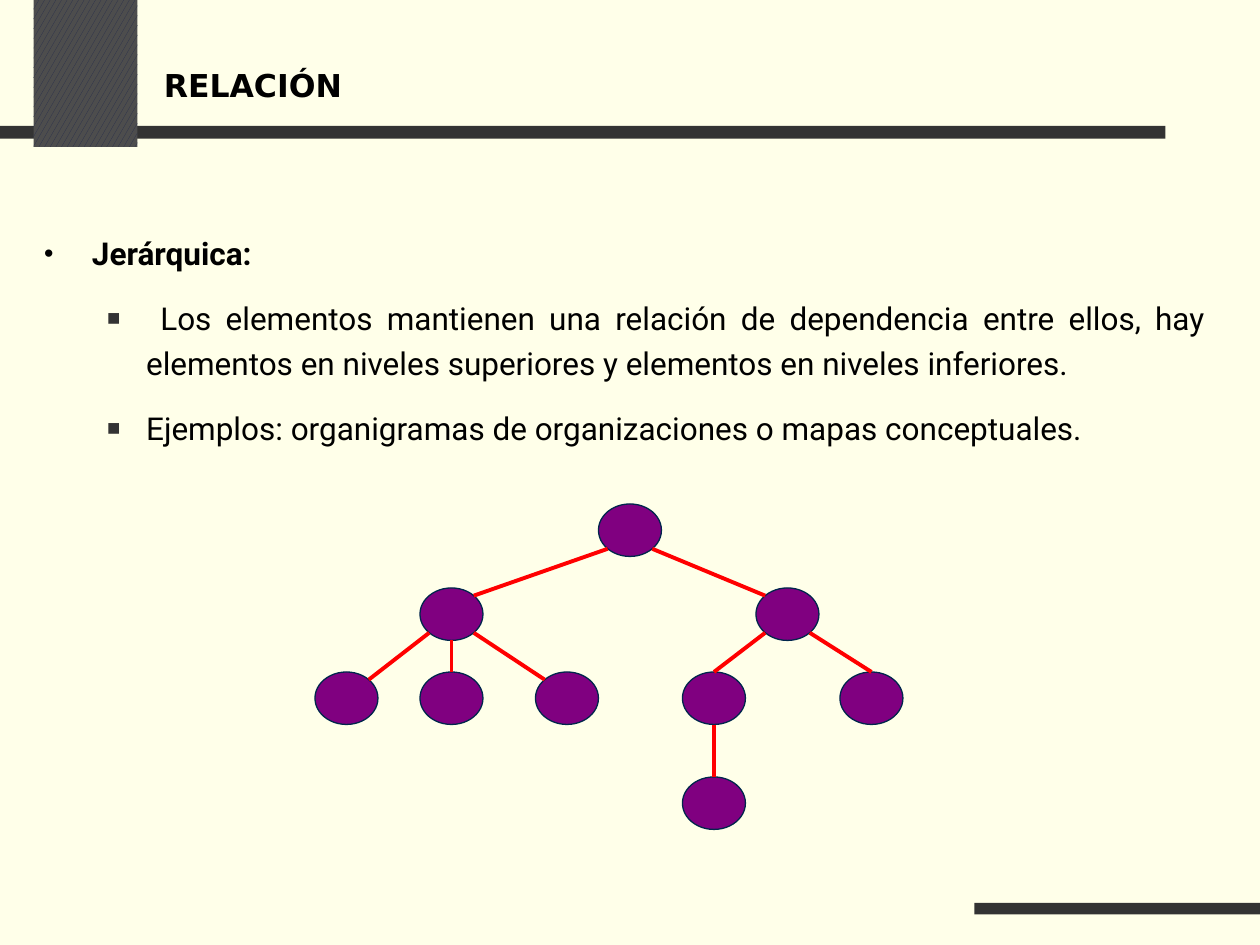
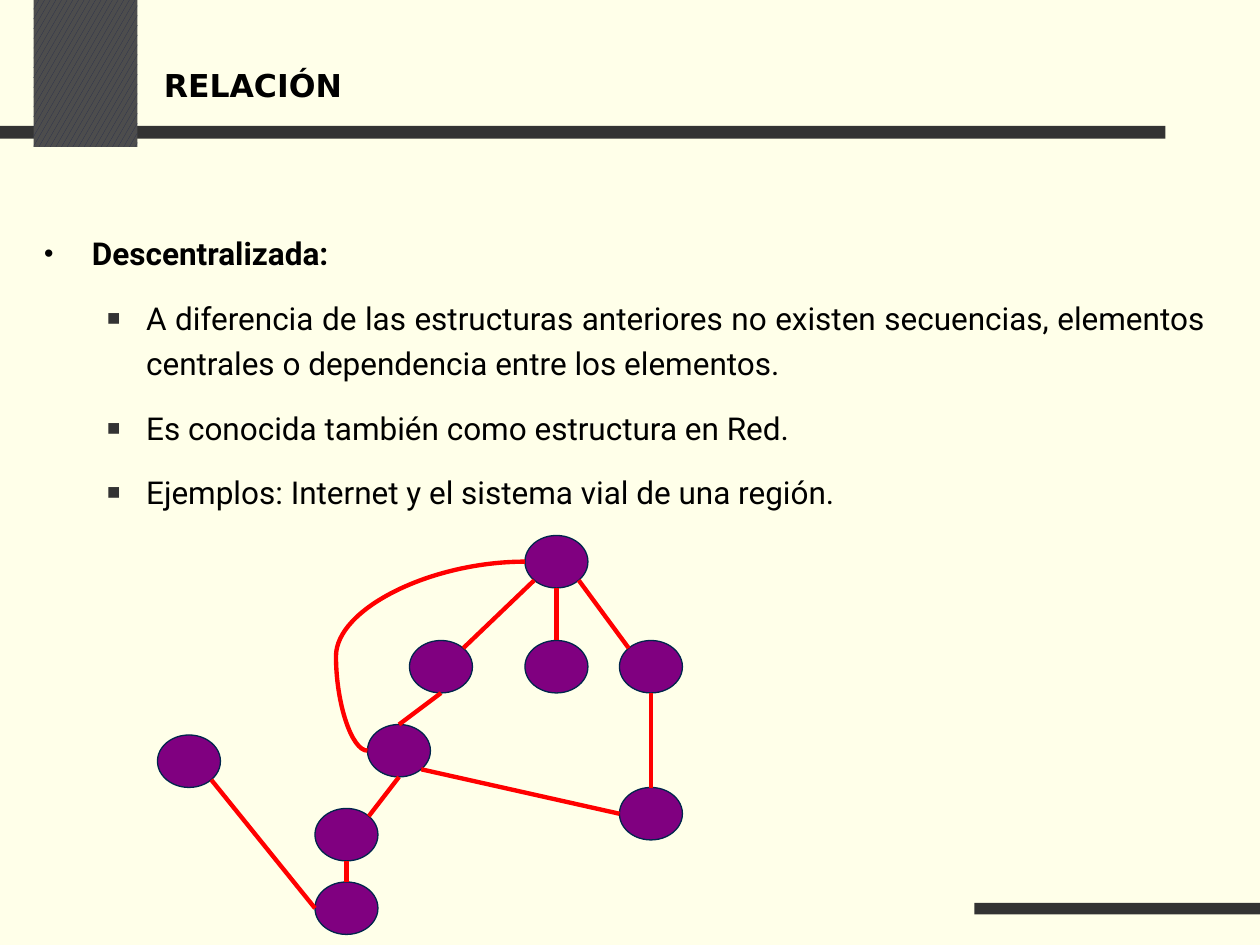
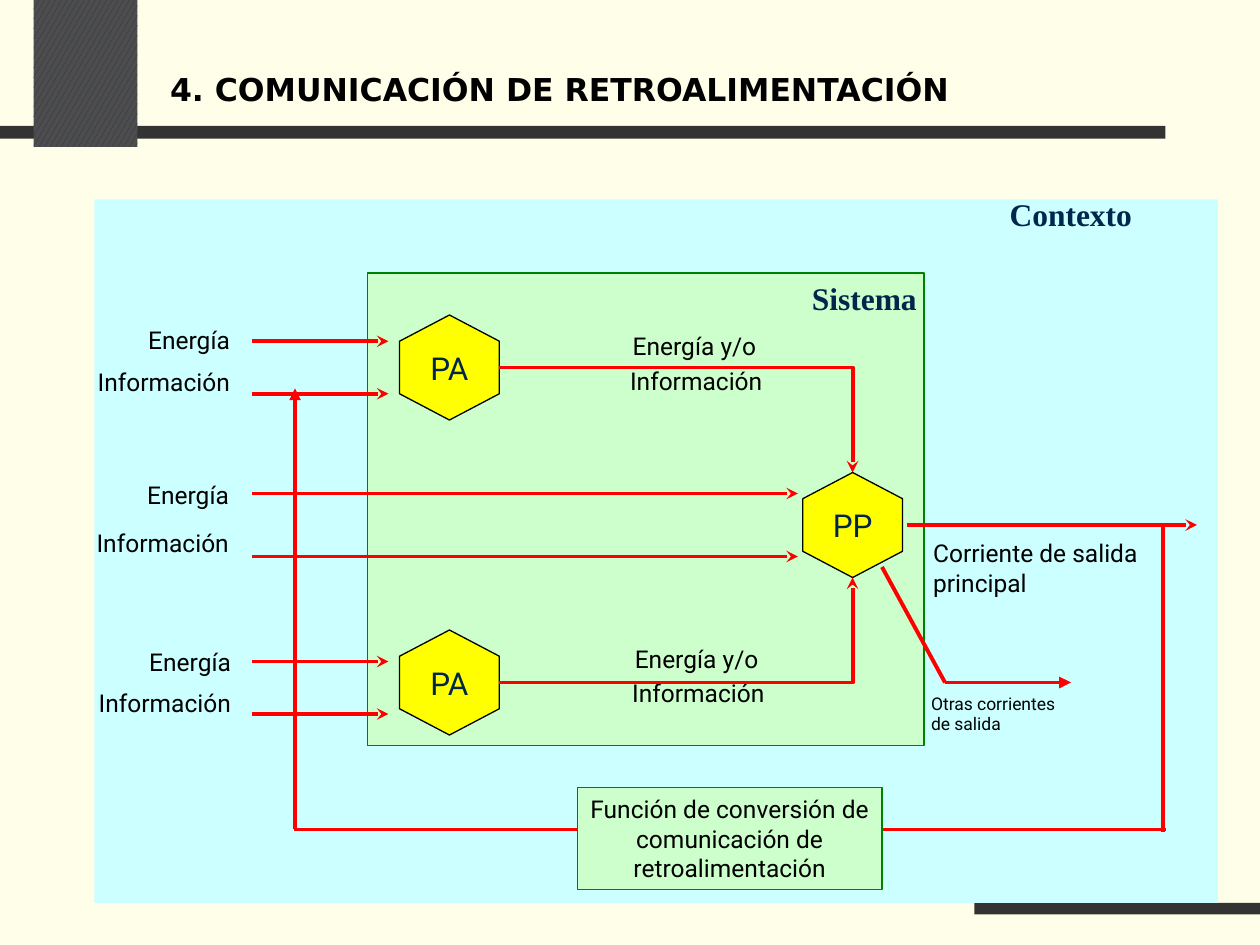
import math
from dataclasses import dataclass

import pptx
import pptx.dml.color
import pptx.enum.dml
import pptx.enum.shapes
import pptx.enum.text
import pptx.oxml
import pptx.oxml.ns
import pptx.util
from lxml import etree

SHAPE = pptx.enum.shapes.MSO_SHAPE
CONNECTOR = pptx.enum.shapes.MSO_CONNECTOR
ALIGN = pptx.enum.text.PP_ALIGN
ANCHOR = pptx.enum.text.MSO_ANCHOR
RGB = pptx.dml.color.RGBColor.from_string
qn = pptx.oxml.ns.qn


@dataclass(frozen=True)
class TextStyle:
    font: str
    size: int
    color: str = "000000"
    bold: bool = False


class Theme:
    cell = pptx.util.Inches(10) / 120  # the slide is a grid of 120 x 90 cells
    page = "FFFFE9"
    band = "333333"
    block_fore, block_back = "262D4C", "4D4D4D"
    node, node_edge = "800080", "00264C"
    flow = "FF0000"
    context, system, system_edge = "CCFFFF", "CCFFCC", "008000"
    process, process_edge = "FFFF00", "000000"
    title = TextStyle("DejaVu Sans", 18, bold=True)
    body = TextStyle("Roboto", 18)
    label = TextStyle("Roboto", 14)
    small = TextStyle("Roboto", 10)
    process_text = TextStyle("Roboto", 18, "00264C")
    area = TextStyle("Times New Roman", 18, "00264C", True)


def place(shapes, kind, box, fill=None, edge=None):
    """Add a preset shape, or a text box if kind is None; box is in grid cells."""
    left, top, width, height = (round(n * Theme.cell) for n in box)
    if kind is None:
        return shapes.add_textbox(left, top, width, height)
    part = shapes.add_shape(kind, left, top, width, height)
    part.shadow.inherit = False
    part.fill.solid()
    part.fill.fore_color.rgb = RGB(fill)
    if edge:
        part.line.color.rgb = RGB(edge)
        part.line.width = pptx.util.Pt(0.75)
    else:
        part.line.fill.background()
    return part


def write(frame, lines, style, align=ALIGN.LEFT, spacing=1.0, gap=0, wrap=True):
    """Fill a text frame; gap is the space in points between paragraphs."""
    frame.text = "\n".join(lines)
    frame.word_wrap = wrap
    frame.auto_size = pptx.enum.text.MSO_AUTO_SIZE.NONE
    for number, paragraph in enumerate(frame.paragraphs):
        paragraph.alignment = align
        paragraph.line_spacing = spacing
        paragraph.space_before = pptx.util.Pt(gap if number else 0)
        for run in paragraph.runs:
            run.font.name = style.font
            run.font.size = pptx.util.Pt(style.size)
            run.font.bold = style.bold
            run.font.color.rgb = RGB(style.color)


prs = pptx.Presentation()
prs.slide_width = pptx.util.Inches(10)
prs.slide_height = pptx.util.Inches(7.5)
content_layout, title_layout = prs.slide_layouts[1], prs.slide_layouts[5]

# Slides and titles
HEADINGS = [
    (content_layout, "RELACIÓN", (14.4, 3.5, 102, 7), ANCHOR.BOTTOM),
    (content_layout, "RELACIÓN", (14.4, 3.5, 102, 7), ANCHOR.BOTTOM),
    (title_layout, "4. COMUNICACIÓN DE RETROALIMENTACIÓN", (15, 1, 102, 15), ANCHOR.MIDDLE),
]
slides = []
for layout, heading, box, anchor in HEADINGS:
    slide = prs.slides.add_slide(layout)
    title = slide.shapes.title
    title.left, title.top, title.width, title.height = (round(n * Theme.cell) for n in box)
    write(title.text_frame, [heading], Theme.title)
    title.text_frame.vertical_anchor = anchor
    slides.append(slide)
hierarchy, network, feedback = slides

# Background and bands, moved to the master so that every slide shares them
master = prs.slide_master
master.background.fill.solid()
master.background.fill.fore_color.rgb = RGB(Theme.page)
header_rule, corner_block, footer_rule = bands = [
    place(hierarchy.shapes, SHAPE.RECTANGLE, box, Theme.band)
    for box in [(0, 12, 111, 1.2), (3.2, 0, 9.9, 14), (92.8, 86, 27.2, 1.1)]
]
corner_block.fill.patterned()
corner_block.fill.pattern = pptx.enum.dml.MSO_PATTERN.LARGE_CONFETTI
corner_block.fill.fore_color.rgb = RGB(Theme.block_fore)
corner_block.fill.back_color.rgb = RGB(Theme.block_back)
for number, band in enumerate(bands, start=20):
    band.element.nvSpPr.cNvPr.id = number
    master.shapes.element.append(band.element)

# Explanations and node diagrams; node places are in cells
NODE_WIDTH, NODE_HEIGHT = 6, 5
DIAGONAL = math.sqrt(0.5)
SITES = {
    "N": (0, -1), "S": (0, 1), "W": (-1, 0),
    "NE": (DIAGONAL, -DIAGONAL), "NW": (-DIAGONAL, -DIAGONAL),
    "SE": (DIAGONAL, DIAGONAL), "SW": (-DIAGONAL, DIAGONAL),
}
STRAIGHT, BENT, CURVED = "line", "bentConnector2", "curvedConnector3"
RELATIONS = [
    (
        hierarchy,
        [
            "Jerárquica:",
            " Los elementos mantienen una relación de dependencia entre ellos, hay "
            "elementos en niveles superiores y elementos en niveles inferiores.",
            "Ejemplos: organigramas de organizaciones o mapas conceptuales.",
        ],
        [(57, 48), (40, 56), (72, 56), (30, 64), (40, 64), (51, 64), (65, 64), (80, 64), (65, 74)],
        [
            (0, "SW", 1, "NE"), (0, "SE", 2, "NW"), (1, "SW", 3, "NE"), (1, "S", 4, "N"),
            (1, "SE", 5, "NW"), (2, "SW", 6, "N"), (2, "SE", 7, "N"), (6, "S", 8, "N"),
        ],
        2.25,
    ),
    (
        network,
        [
            "Descentralizada:",
            "A diferencia de las estructuras anteriores no existen secuencias, elementos "
            "centrales o dependencia entre los elementos.",
            "Es conocida también como estructura en Red.",
            "Ejemplos: Internet y el sistema vial de una región.",
        ],
        [(50, 51), (50, 61), (39, 61), (59, 61), (35, 69), (59, 75), (30, 77), (30, 84), (15, 70)],
        [
            (0, "SW", 2, "NE"), (1, "N", 0, "S"), (0, "SE", 3, "NW"), (2, "S", 4, "N"),
            (3, "S", 5, "N"), (5, "W", 4, "SE"), (4, "S", 6, "NE"), (6, "S", 7, "N"),
            (7, "W", 8, "SE"), (4, "W", 0, "W"),
        ],
        2.5,
    ),
]
links = []  # slide, start, end, width, arrowhead, route
for slide, lines, nodes, edges, width in RELATIONS:
    body = slide.placeholders[1]
    body.left, body.top, body.width, body.height = (
        round(n * Theme.cell) for n in (3, 21, 113, 62)
    )
    write(body.text_frame, lines, Theme.body, ALIGN.JUSTIFY, spacing=1.2, gap=11)
    for number, paragraph in enumerate(body.text_frame.paragraphs):
        margin, hanging, size, mark = (0.81, 0.31, 70, "■") if number else (0.38, 0.38, 85, "•")
        paragraph.level = 1 if number else 0
        paragraph.runs[0].font.bold = number == 0
        properties = paragraph._p.get_or_add_pPr()
        properties.set("marL", str(pptx.util.Inches(margin)))
        properties.set("indent", str(-pptx.util.Inches(hanging)))
        if number:
            color = etree.SubElement(properties, qn("a:buClr"))
            etree.SubElement(color, qn("a:srgbClr"), val=Theme.band)
        etree.SubElement(properties, qn("a:buSzPct"), val=str(size * 1000))
        etree.SubElement(properties, qn("a:buChar"), char=mark)

    for left, top in nodes:
        box = (left, top, NODE_WIDTH, NODE_HEIGHT)
        place(slide.shapes, SHAPE.OVAL, box, Theme.node, Theme.node_edge)
    for origin, origin_site, target, target_site in edges:
        start, end = (
            (
                nodes[node][0] + NODE_WIDTH / 2 * (1 + SITES[site][0]),
                nodes[node][1] + NODE_HEIGHT / 2 * (1 + SITES[site][1]),
            )
            for node, site in ((origin, origin_site), (target, target_site))
        )
        route = CURVED if origin_site == target_site else STRAIGHT
        links.append((slide, start, end, width, None, route))

# Feedback system: areas, processes and labels
place(feedback.shapes, SHAPE.RECTANGLE, (9, 19, 107, 67), Theme.context)
place(feedback.shapes, SHAPE.RECTANGLE, (35, 26, 53, 45), Theme.system, Theme.system_edge)

for name, center_x, center_y in [("PA", 42.8, 35), ("PA", 42.8, 65), ("PP", 81.2, 50)]:
    box = (center_x - 5, center_y - 4.75, 10, 9.5)
    process = place(feedback.shapes, SHAPE.HEXAGON, box, Theme.process, Theme.process_edge)
    process.adjustments[0] = 0.263
    process.rotation = 90
    write(process.text_frame, [name], Theme.process_text, ALIGN.CENTER, wrap=False)
    process.text_frame._txBody.bodyPr.set("vert", "vert270")  # keeps the name upright

INPUT = ["Energía", "Información"]
TRANSFER = ["Energía y/o ", "Información"]
LABELS = [
    ((6.1, 30.4, 17, 8.2), INPUT, Theme.label, ALIGN.RIGHT, 1.0),
    ((6, 44.6, 17, 9.4), INPUT, Theme.label, ALIGN.RIGHT, 1.2),
    ((6.2, 61, 17, 8.2), INPUT, Theme.label, ALIGN.RIGHT, 1.0),
    ((45.8, 31.6, 28, 6.8), TRANSFER, Theme.label, ALIGN.RIGHT, 0.75),
    ((46, 61.4, 28, 6.8), TRANSFER, Theme.label, ALIGN.RIGHT, 0.75),
    ((87.7, 51.6, 23.3, 5.9), ["Corriente de salida", "principal"], Theme.label, ALIGN.LEFT, 0.6),
    ((90, 18, 19, 4.8), ["Contexto"], Theme.area, ALIGN.RIGHT, 1.0),
    ((75.5, 26, 13, 4.8), ["Sistema"], Theme.area, ALIGN.RIGHT, 1.0),
    ((87.5, 65.6, 15.6, 5), ["Otras corrientes de salida"], Theme.small, ALIGN.LEFT, 0.95),
]
for box, lines, style, align, spacing in LABELS:
    label = place(feedback.shapes, None, box)
    write(label.text_frame, lines, style, align, spacing, gap=7)

FLOWS = [
    *(((24, y), (37, y), "stealth", STRAIGHT) for y in (32.5, 37.5, 63, 68)),
    *(((24, y), (76, y), "stealth", STRAIGHT) for y in (47, 53)),
    ((47.5, 35), (81.2, 45), "stealth", BENT),
    ((47.5, 65), (81.2, 55), "stealth", BENT),
    ((86.4, 50), (114, 50), "stealth", STRAIGHT),
    ((84, 54), (90, 65), None, STRAIGHT),
    ((90, 65), (102, 65), "triangle", STRAIGHT),
    ((110.8, 50), (110.8, 79.2), None, STRAIGHT),
    ((111, 79), (28, 79), None, STRAIGHT),
    ((28.1, 79), (28.1, 37), "triangle", STRAIGHT),
]
links += [(feedback, start, end, 2.25, head, route) for start, end, head, route in FLOWS]

# Lines of all three diagrams
KINDS = {STRAIGHT: CONNECTOR.STRAIGHT, BENT: CONNECTOR.ELBOW, CURVED: CONNECTOR.CURVE}
for slide, start, end, width, head, route in links:
    ends = (round(n * Theme.cell) for n in (*start, *end))
    link = slide.shapes.add_connector(KINDS[route], *ends)
    link.line.color.rgb = RGB(Theme.flow)
    link.line.width = pptx.util.Pt(width)
    properties = link.element.spPr
    geometry = properties.find(qn("a:prstGeom"))
    geometry.set("prst", route)
    if route == CURVED:
        guides = geometry.find(qn("a:avLst"))
        etree.SubElement(guides, qn("a:gd"), name="adj1", fmla="val -20000")
    if head:
        etree.SubElement(properties.find(qn("a:ln")), qn("a:tailEnd"), type=head)
    etree.SubElement(properties, qn("a:effectLst"))

# The conversion box covers the feedback line
conversion = place(
    feedback.shapes, SHAPE.RECTANGLE, (55, 75, 29, 9.7), Theme.system, Theme.system_edge
)
write(
    conversion.text_frame,
    ["Función de conversión de comunicación de retroalimentación"],
    Theme.label,
    ALIGN.CENTER,
)

prs.save("out.pptx")
